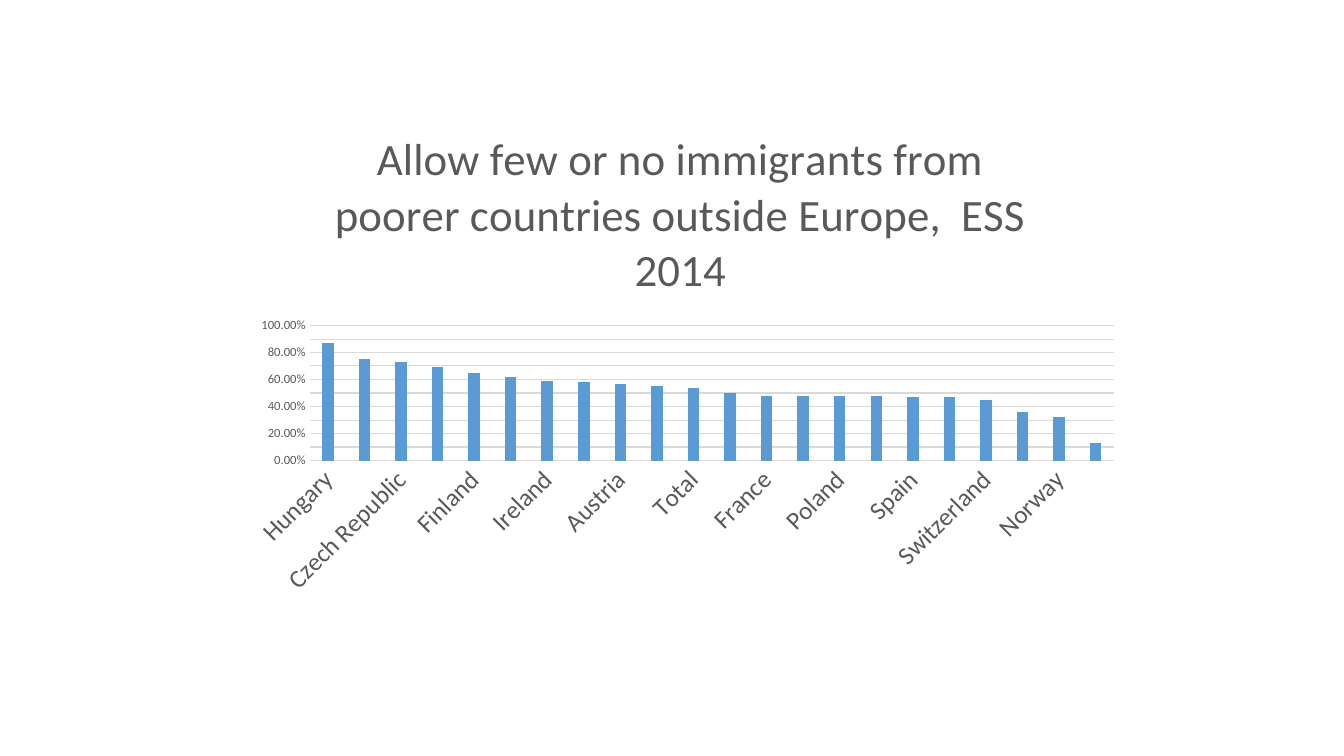
from lxml import etree
from pptx import Presentation, util as u
from pptx.chart.data import CategoryChartData
from pptx.dml.color import RGBColor
from pptx.enum import chart as kinds
from pptx.oxml import parse_xml
from pptx.oxml.ns import nsdecls, qn

TITLE = "Allow few or no immigrants from poorer countries outside Europe,  ESS 2014"
SHARES = {
    "Hungary": 0.87, "Israel": 0.75, "Czech Republic": 0.73, "Estonia": 0.69,
    "Finland": 0.65, "Lithuania": 0.62, "Ireland": 0.59, "United Kingdom": 0.58,
    "Austria": 0.57, "Denmark": 0.55, "Total": 0.54, "Portugal": 0.5,
    "France": 0.48, "Slovenia": 0.48, "Poland": 0.48, "Belgium": 0.48,
    "Spain": 0.47, "Netherlands": 0.47, "Switzerland": 0.45, "Germany": 0.36,
    "Norway": 0.32, "Sweden": 0.13,
}
FONT = "Calibri"
BLUE = RGBColor(0x5B, 0x9B, 0xD5)
GREY = RGBColor(0x59, 0x59, 0x59)
PALE = RGBColor(0xD9, 0xD9, 0xD9)
WIDTH, HEIGHT = 13.33, 7.5
FRAME = (2.35, 1.16, 8.87, 4.84)
PLOT_BOX = (3.07, 3.23, 7.98, 1.34)
TITLE_CORNER = (3.24, 1.18)
AXIS_FORMAT = {
    "major_tick_mark": kinds.XL_TICK_MARK.NONE,
    "minor_tick_mark": kinds.XL_TICK_MARK.NONE,
}
VALUE_FORMAT = {
    "minimum_scale": 0, "maximum_scale": 1, "major_unit": 0.1,
    "has_major_gridlines": True,
}


def apply(target, values):
    for name, value in values.items():
        setattr(target, name, value)


def style_font(font, size):
    apply(font, {"name": FONT, "size": u.Pt(size), "bold": False})
    font.color.rgb = GREY


def style_line(line):
    line.color.rgb = PALE
    line.width = u.Pt(0.75)


def place(parent, index, box, target=None):
    for old in parent.findall(qn("c:layout")):
        parent.remove(old)
    left, top, width, height = FRAME
    origin = (left, top, 0, 0)
    extent = (width, height, width, height)
    shares = [(value - start) / size for value, start, size in zip(box, origin, extent)]
    settings = {"layoutTarget": target} if target else {}
    settings |= {"xMode": "edge", "yMode": "edge", **dict(zip("xywh", shares))}
    layout = parse_xml(f"<c:layout {nsdecls('c')}><c:manualLayout/></c:layout>")
    for tag, value in settings.items():
        etree.SubElement(layout[0], qn("c:" + tag)).set("val", str(value))
    parent.insert(index, layout)


def add_country_chart(page):
    data = CategoryChartData(number_format="0.00%")
    data.categories = list(SHARES)
    data.add_series("Series 1", list(SHARES.values()))
    chart = page.shapes.add_chart(
        kinds.XL_CHART_TYPE.COLUMN_CLUSTERED, *map(u.Inches, FRAME), data
    ).chart
    apply(chart, {"has_legend": False, "has_title": True})
    style_font(chart.font, 10)
    plot = chart.plots[0]
    apply(plot, {"gap_width": 219, "overlap": -27, "vary_by_categories": False})
    fill = plot.series[0].format.fill
    fill.solid()
    fill.fore_color.rgb = BLUE
    place(chart.element.find(".//" + qn("c:plotArea")), 0, PLOT_BOX, "inner")
    return chart


def add_title(chart):
    title = chart.chart_title
    heading = title.text_frame.paragraphs[0]
    span = heading.add_run()
    span.text = TITLE
    for font in (heading.font, span.font):
        style_font(font, 32)
    title.include_in_layout = False
    element = chart.element.find(".//" + qn("c:title"))
    place(element, 1, TITLE_CORNER)


def style_axes(chart):
    countries, scale = chart.category_axis, chart.value_axis
    for axis, size in ((countries, 18), (scale, 9)):
        apply(axis, AXIS_FORMAT)
        style_font(axis.tick_labels.font, size)
    style_line(countries.format.line)
    labels = chart.element.find(".//" + qn("c:catAx") + "/" + qn("c:txPr"))
    slant = labels.find(qn("a:bodyPr"))
    slant.set("rot", "-2700000")
    slant.set("vert", "horz")
    apply(scale, VALUE_FORMAT)
    style_line(scale.major_gridlines.format.line)
    scale.format.line.fill.background()
    apply(scale.tick_labels, {"number_format": "0.00%", "number_format_is_linked": False})


def main():
    deck = Presentation()
    deck.slide_width, deck.slide_height = u.Inches(WIDTH), u.Inches(HEIGHT)
    page = deck.slides.add_slide(deck.slide_layouts[6])
    chart = add_country_chart(page)
    add_title(chart)
    style_axes(chart)
    deck.save("out.pptx")


if __name__ == "__main__":
    main()
